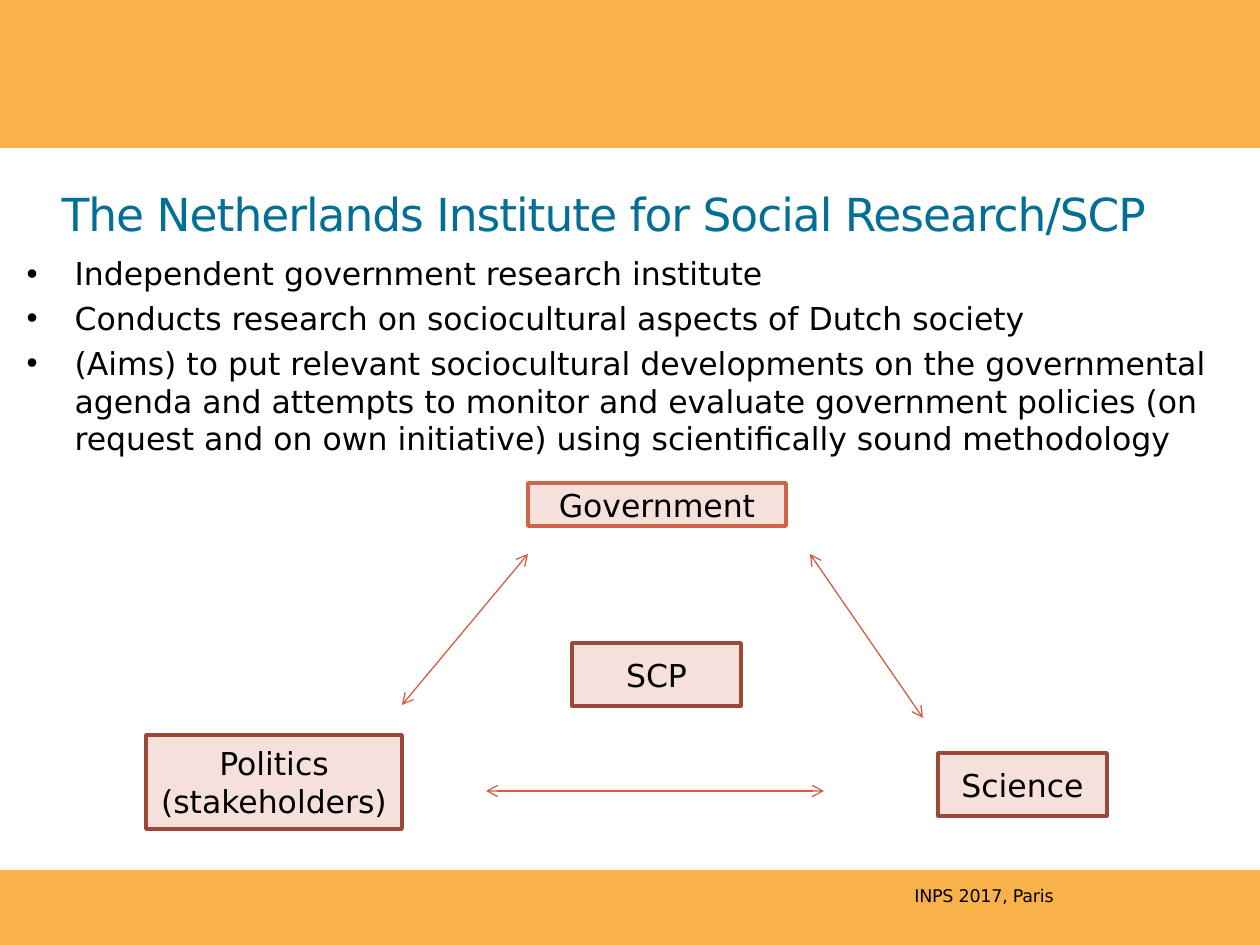
from dataclasses import dataclass

from lxml.etree import SubElement
from pptx import Presentation
from pptx.dml.color import RGBColor
from pptx.enum.shapes import MSO_CONNECTOR, MSO_SHAPE
from pptx.enum.text import MSO_ANCHOR, MSO_AUTO_SIZE, PP_ALIGN
from pptx.oxml.ns import qn
from pptx.util import Emu, Pt

FONT = "DejaVu Sans"
BLACK = "000000"
WHITE = "FFFFFF"
ORANGE = "F9B249"
PINK = "F6E0DB"
BROWN = "9B4936"
RED = "D16349"
ARROW_RED = "D05F44"
TEAL = "046F96"
EMU_PER_PX = 914400 / 126


@dataclass(frozen=True)
class Area:
    left: int
    top: int
    width: int
    height: int


@dataclass(frozen=True)
class Actor:
    label: str
    area: Area
    outline: str = BROWN


@dataclass(frozen=True)
class Arrow:
    start: tuple[int, int]
    end: tuple[int, int]


BANDS = [Area(0, 870, 1260, 75), Area(0, 0, 1260, 148)]
BULLETS = [
    "Independent government research institute",
    "Conducts research on sociocultural aspects of Dutch society",
    "(Aims) to put relevant sociocultural developments on the governmental "
    "agenda and attempts to monitor and evaluate government policies (on "
    "request and on own initiative) using scientifically sound methodology",
]
ACTORS = [
    Actor("Government", Area(528, 483, 258, 43), RED),
    Actor("Politics (stakeholders)", Area(146, 735, 256, 94)),
    Actor("Science", Area(938, 753, 169, 63)),
    Actor("SCP", Area(572, 643, 169, 63)),
]
ARROWS = [
    Arrow((528, 554), (402, 705)),
    Arrow((923, 718), (810, 554)),
    Arrow((824, 791), (486, 791)),
]


def px(length: int) -> Emu:
    return Emu(round(length * EMU_PER_PX))


def color(value: str) -> RGBColor:
    return RGBColor.from_string(value)


def place(shape, area: Area) -> None:
    shape.left, shape.top = px(area.left), px(area.top)
    shape.width, shape.height = px(area.width), px(area.height)


def style(paragraph, size: int, ink: str = BLACK, align=PP_ALIGN.LEFT) -> None:
    paragraph.alignment = align
    paragraph.font.name = FONT
    paragraph.font.size = Pt(size)
    paragraph.font.color.rgb = color(ink)


def tighten(paragraph, spacing: int) -> None:
    for span in paragraph.runs:
        span._r.get_or_add_rPr().set("spc", str(spacing))


def add_rectangle(page, area: Area, fill: str):
    box = page.shapes.add_shape(
        MSO_SHAPE.RECTANGLE, px(area.left), px(area.top), px(area.width), px(area.height)
    )
    box.shadow.inherit = False
    box.fill.solid()
    box.fill.fore_color.rgb = color(fill)
    box.line.fill.background()
    return box


def add_actor(page, actor: Actor) -> None:
    box = add_rectangle(page, actor.area, PINK)
    box.line.color.rgb = color(actor.outline)
    box.line.width = Pt(2)
    frame = box.text_frame
    frame.word_wrap = True
    frame.vertical_anchor = MSO_ANCHOR.MIDDLE
    frame.text = actor.label
    style(frame.paragraphs[0], 18, align=PP_ALIGN.CENTER)


def add_arrow(page, arrow: Arrow) -> None:
    line = page.shapes.add_connector(
        MSO_CONNECTOR.STRAIGHT, *map(px, arrow.start), *map(px, arrow.end)
    )
    line.line.color.rgb = color(ARROW_RED)
    line.line.width = Pt(0.75)
    outline = line.line._get_or_add_ln()
    for end in ("a:headEnd", "a:tailEnd"):
        SubElement(outline, qn(end), type="arrow")
    SubElement(line._element.spPr, qn("a:effectLst"))


def fill_title(title) -> None:
    place(title, Area(49, 174, 1134, 78))
    title.fill.solid()
    title.fill.fore_color.rgb = color(WHITE)
    frame = title.text_frame
    frame.text = "The Netherlands Institute for Social Research/SCP"
    frame.auto_size = MSO_AUTO_SIZE.NONE
    frame.vertical_anchor = MSO_ANCHOR.MIDDLE
    style(frame.paragraphs[0], 26, TEAL)
    tighten(frame.paragraphs[0], -60)


def fill_body(body) -> None:
    place(body, Area(14, 248, 1230, 617))
    frame = body.text_frame
    frame.text = "\n".join(BULLETS)
    frame.auto_size = MSO_AUTO_SIZE.NONE
    for index, paragraph in enumerate(frame.paragraphs):
        properties = paragraph._p.get_or_add_pPr()
        properties.set("marL", str(px(48)))
        properties.set("indent", str(-px(48)))
        SubElement(properties, qn("a:buFont"), typeface="Arial")
        SubElement(properties, qn("a:buChar"), char="•")
        paragraph.space_before = Pt(4 if index else 0)
        style(paragraph, 18)


def add_footer(page) -> None:
    box = page.shapes.add_textbox(px(902), px(879), px(290), px(44))
    frame = box.text_frame
    frame.word_wrap = True
    frame.text = "INPS 2017, Paris"
    style(frame.paragraphs[0], 10)
    tighten(frame.paragraphs[0], -10)


def main() -> None:
    deck = Presentation()
    deck.slide_width, deck.slide_height = px(1260), px(945)
    page = deck.slides.add_slide(deck.slide_layouts[1])
    page.background.fill.solid()
    page.background.fill.fore_color.rgb = color(WHITE)
    for band in BANDS:
        add_rectangle(page, band, ORANGE)
    fill_title(page.shapes.title)
    fill_body(page.placeholders[1])
    add_footer(page)
    for actor in ACTORS:
        add_actor(page, actor)
    for arrow in ARROWS:
        add_arrow(page, arrow)
    deck.save("out.pptx")


if __name__ == "__main__":
    main()
